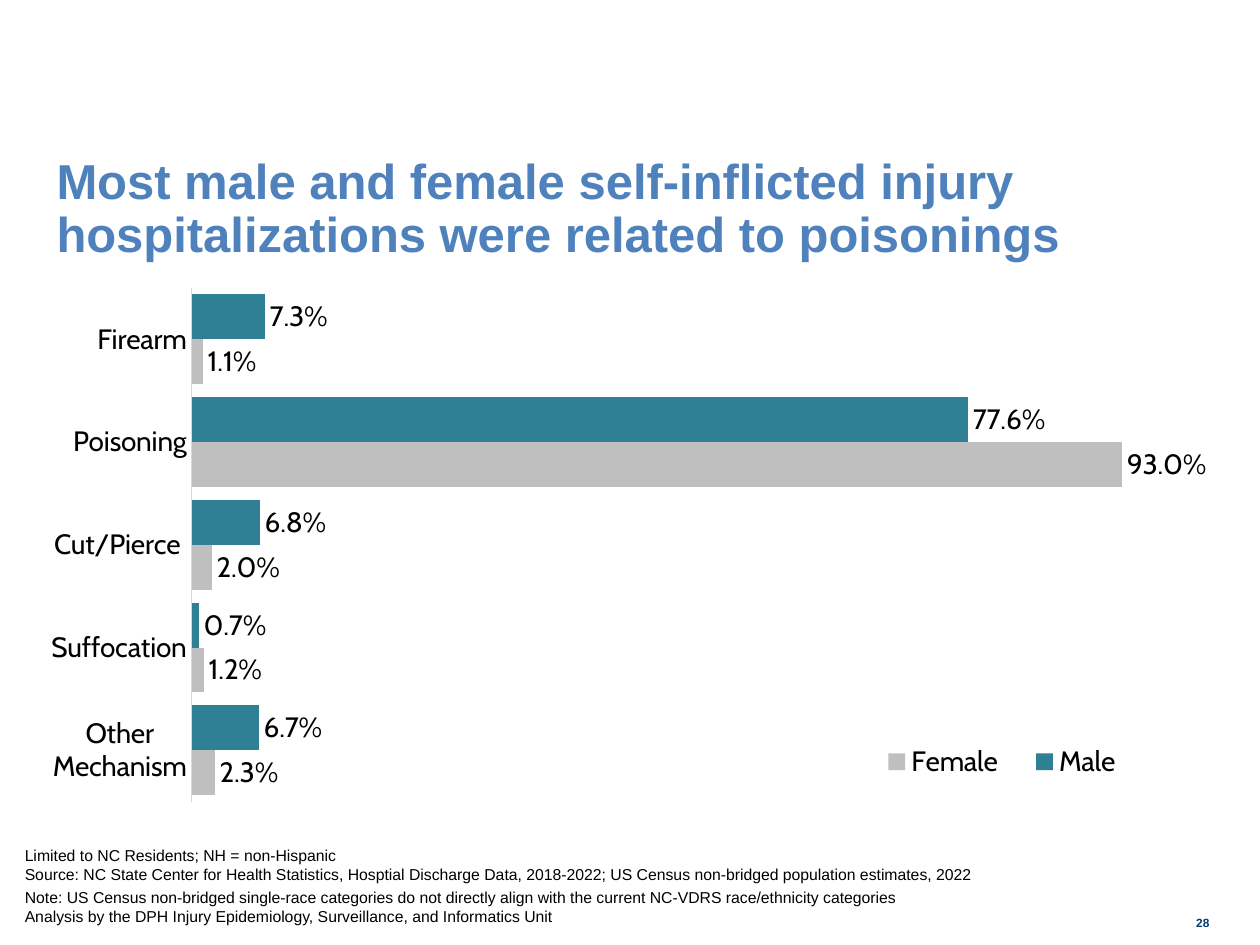
from lxml import etree
from pptx import Presentation
from pptx.chart.data import CategoryChartData
from pptx.dml.color import RGBColor
from pptx.enum.chart import (XL_CHART_TYPE, XL_LABEL_POSITION,
                             XL_LEGEND_POSITION, XL_TICK_MARK)
from pptx.enum.text import MSO_ANCHOR, PP_ALIGN
from pptx.oxml.ns import qn
from pptx.util import Cm, Pt

BAR = XL_CHART_TYPE.BAR_CLUSTERED
OUTSIDE = XL_LABEL_POSITION.OUTSIDE_END
BOTTOM_LEGEND = XL_LEGEND_POSITION.BOTTOM
NO_TICK = XL_TICK_MARK.NONE
TOP, BOTTOM = MSO_ANCHOR.TOP, MSO_ANCHOR.BOTTOM
LEFT, RIGHT = PP_ALIGN.LEFT, PP_ALIGN.RIGHT

MECHANISMS = ["Firearm", "Poisoning", "Cut/Pierce ", "Suffocation",
              "Other Mechanism"]
SERIES = [
    ("Male", [0.073, 0.776, 0.068, 0.007, 0.067], "2F7F95"),
    ("Female", [0.011, 0.93, 0.02, 0.012, 0.023], "BFBFBF"),
]


def rgb(value):
    return RGBColor.from_string(value)


def set_font(font, size, color="000000", name="Arial", bold=False):
    font.size, font.name, font.bold = Pt(size), name, bold
    font.color.rgb = rgb(color)


def add_text(s, box, text, size, color="000000", bold=False,
             align=LEFT, anchor=TOP, spacing=1.0):
    tf = s.shapes.add_textbox(*map(Cm, box)).text_frame
    tf.word_wrap = True
    tf.vertical_anchor = anchor
    p = tf.paragraphs[0]
    p.text = text
    p.alignment, p.line_spacing = align, spacing
    set_font(p.font, size, color, bold=bold)


def set_layout(element, before, box, inner=False):
    """Place a chart part by fractions of the chart area."""
    for old in element.findall(qn("c:layout")):
        element.remove(old)
    layout = etree.Element(qn("c:layout"))
    manual = etree.SubElement(layout, qn("c:manualLayout"))
    settings = [("layoutTarget", "inner")] if inner else []
    settings += [("xMode", "edge"), ("yMode", "edge")]
    settings += zip("xywh", box)
    for tag, value in settings:
        etree.SubElement(manual, qn("c:" + tag)).set("val", str(value))
    element.find(qn(before)).addprevious(layout)


def add_mechanism_chart(s, box):
    data = CategoryChartData(number_format="0.0%")
    data.categories = MECHANISMS
    for name, values, _ in SERIES:
        data.add_series(name, values)
    chart = s.shapes.add_chart(BAR, *map(Cm, box), data).chart
    chart.has_title = False
    set_font(chart.font, 10)

    # Bars and their labels
    plot = chart.plots[0]
    plot.gap_width, plot.overlap = 29, 0
    plot.vary_by_categories = False
    for series, (_, _, color) in zip(plot.series, SERIES):
        series.format.fill.solid()
        series.format.fill.fore_color.rgb = rgb(color)
        series.invert_if_negative = False
        labels = series.data_labels
        labels.show_value = True
        labels.position = OUTSIDE
        labels.number_format = "0.0%"
        labels.number_format_is_linked = False
        set_font(labels.font, 16, name="Cabin")

    # Axes
    axis = chart.category_axis
    axis.reverse_order = True
    axis.major_tick_mark = axis.minor_tick_mark = NO_TICK
    axis.format.line.color.rgb = rgb("D9D9D9")
    axis.format.line.width = Pt(0.75)
    set_font(axis.tick_labels.font, 16, name="Cabin")
    scale = chart.value_axis
    scale.minimum_scale, scale.maximum_scale = 0, 1
    scale.has_major_gridlines = False
    scale.visible = False

    # Legend in the empty lower right corner
    chart.has_legend = True
    legend = chart.legend
    legend.position = BOTTOM_LEGEND
    legend.include_in_layout = True
    set_font(legend.font, 16, name="Cabin")
    root = chart.element
    set_layout(root.find(".//" + qn("c:legend")), "c:overlay",
               (0.7, 0.78, 0.24, 0.08))
    set_layout(root.find(".//" + qn("c:plotArea")), "c:barChart",
               (0.138, 0.018, 0.842, 0.87), inner=True)


def add_footer(s, left, top, width):
    add_text(s, (left, top, width, 1.42),
             "Limited to NC Residents; NH = non-Hispanic\v"
             "Source: NC State Center for Health Statistics, Hosptial "
             "Discharge Data, 2018-2022; US Census non-bridged population "
             "estimates, 2022", 9, anchor=BOTTOM)
    add_text(s, (left, top + 1.27, width, 1.02),
             "Note: US Census non-bridged single-race categories do not "
             "directly align with the current NC-VDRS race/ethnicity "
             "categories\vAnalysis by the DPH Injury Epidemiology, "
             "Surveillance, and Informatics Unit", 9)
    # Slide number
    add_text(s, (left + 22.81, top + 1.83, 1.57, 0.79), "28", 6.8,
             "003B70", bold=True, align=RIGHT)


def main():
    prs = Presentation()
    prs.slide_width, prs.slide_height = Cm(25.4), Cm(19.05)
    s = prs.slides.add_slide(prs.slide_layouts[6])
    add_mechanism_chart(s, (0.56, 5.59, 23.95, 11.91))
    add_text(s, (0.89, 3.05, 23.75, 3.35),
             "Most male and female self-inflicted injury hospitalizations "
             "were related to poisonings", 28, "4F81BD", bold=True,
             spacing=0.9)
    add_footer(s, 0.25, 16.51, 23.95)
    prs.save("out.pptx")


if __name__ == "__main__":
    main()
